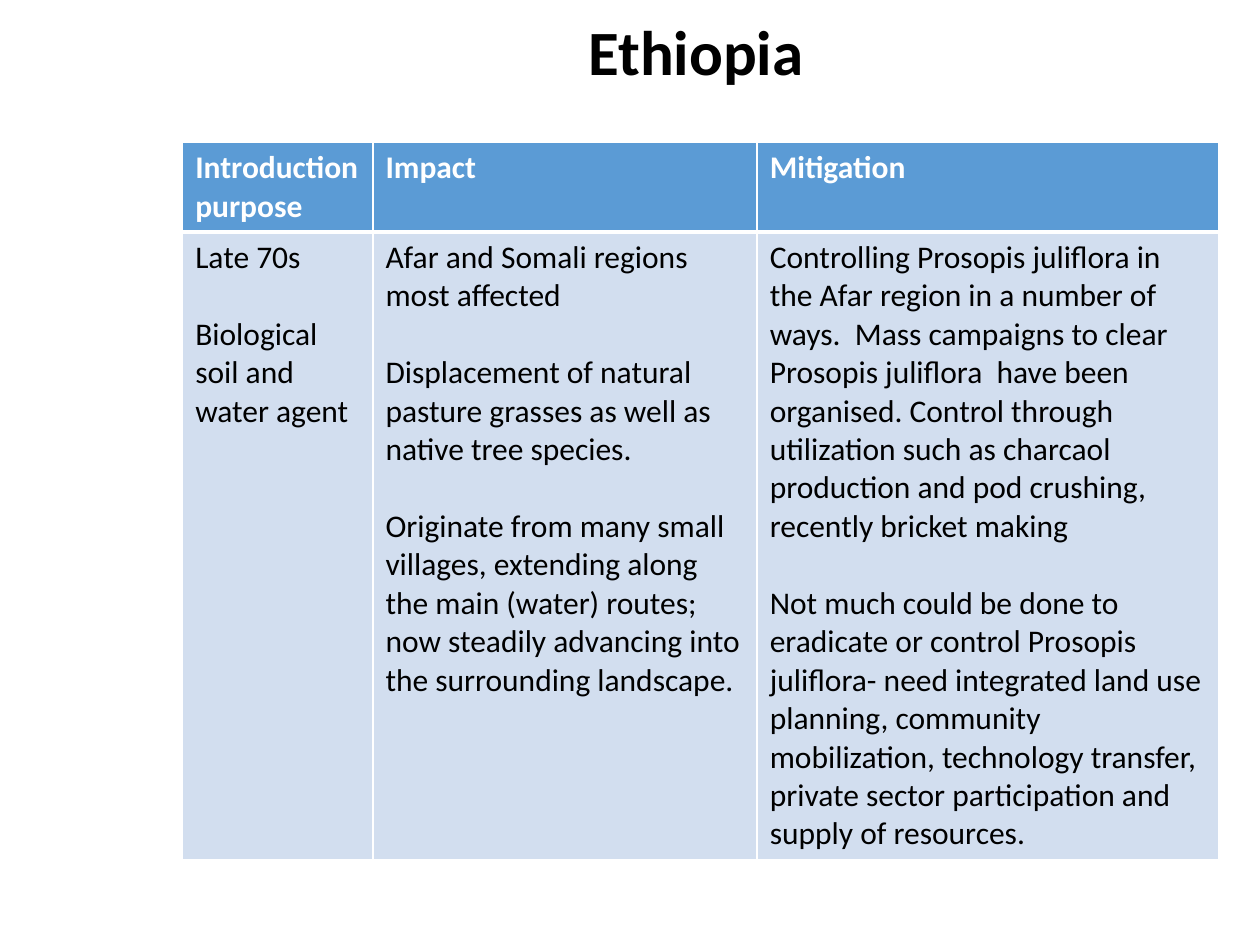
from pptx import Presentation
from pptx.dml.color import RGBColor
from pptx.enum.text import MSO_ANCHOR as Anchor, PP_ALIGN as Align
from pptx.oxml import parse_xml
from pptx.oxml.ns import nsdecls
from pptx.util import Inches, Pt

WHITE = RGBColor(0xFF, 0xFF, 0xFF)
BLACK = RGBColor(0x00, 0x00, 0x00)
HEADER_BLUE = RGBColor(0x5B, 0x9B, 0xD5)
BODY_BLUE = RGBColor(0xD2, 0xDE, 0xEF)

COLUMN_WIDTHS = [1.51, 3.05, 3.66]
ROW_HEIGHTS = [0.71, 4.98]
HEADINGS = ["Introduction purpose", "Impact", "Mitigation"]
FINDINGS = [
    ["Late 70s", "Biological soil and water agent"],
    [
        "Afar and Somali regions most affected",
        "Displacement of natural pasture grasses as well as native tree species.",
        "Originate from many small villages, extending along the main (water) routes; "
        "now steadily advancing into the surrounding landscape.",
    ],
    [
        "Controlling Prosopis juliflora in the Afar region in a number of ways.  "
        "Mass campaigns to clear Prosopis juliflora  have been organised. "
        "Control through utilization such as charcaol production and pod crushing, "
        "recently bricket making",
        "Not much could be done to eradicate or control Prosopis juliflora- need "
        "integrated land use planning, community mobilization, technology transfer, "
        "private sector participation and supply of resources.",
    ],
]


class SlideWriter:
    font_name = "Calibri"
    title_size = Pt(36)
    table_size = Pt(18)
    paragraph_gap = Pt(22)

    def __init__(self, page):
        self.page = page

    def style(self, para, size, color, bold):
        for span in para.runs:
            span.font.name = self.font_name
            span.font.size = size
            span.font.bold = bold
            span.font.color.rgb = color

    def title(self, text, left, top, width, height):
        box = self.page.shapes.add_textbox(
            Inches(left), Inches(top), Inches(width), Inches(height)
        )
        frame = box.text_frame
        frame.word_wrap = True
        frame.vertical_anchor = Anchor.MIDDLE
        frame.text = text
        para = frame.paragraphs[0]
        para.alignment = Align.CENTER
        para.line_spacing = 0.9
        self.style(para, self.title_size, BLACK, True)

    def borders(self, cell, widths):
        properties = cell._tc.get_or_add_tcPr()
        for index, (side, width) in enumerate(widths.items()):
            line = parse_xml(
                f'<a:ln{side} {nsdecls("a")} w="{Pt(width)}"><a:solidFill>'
                f'<a:srgbClr val="{WHITE}"/></a:solidFill></a:ln{side}>'
            )
            properties.insert(index, line)

    def cell(self, cell, paragraphs, fill, color, bold, widths):
        cell.fill.solid()
        cell.fill.fore_color.rgb = fill
        self.borders(cell, widths)
        cell.text_frame.text = "\n".join(paragraphs)
        for index, para in enumerate(cell.text_frame.paragraphs):
            if index:
                para.space_before = self.paragraph_gap
            self.style(para, self.table_size, color, bold)

    def table(self, left, top, column_widths, row_heights, headings, findings):
        table = self.page.shapes.add_table(
            len(row_heights), len(column_widths), Inches(left), Inches(top),
            Inches(sum(column_widths)), Inches(sum(row_heights)),
        ).table
        for column, width in zip(table.columns, column_widths):
            column.width = Inches(width)
        for row, height in zip(table.rows, row_heights):
            row.height = Inches(height)
        header_lines = {"L": 1, "R": 1, "T": 1, "B": 3}
        body_lines = {"L": 1, "R": 1, "T": 3, "B": 1}
        for index, (heading, paragraphs) in enumerate(zip(headings, findings)):
            self.cell(table.cell(0, index), [heading], HEADER_BLUE, WHITE, True, header_lines)
            self.cell(table.cell(1, index), paragraphs, BODY_BLUE, BLACK, False, body_lines)


def main():
    deck = Presentation()
    deck.slide_width = Inches(10)
    deck.slide_height = Inches(7.5)
    writer = SlideWriter(deck.slides.add_slide(deck.slide_layouts[6]))
    writer.table(1.45, 1.13, COLUMN_WIDTHS, ROW_HEIGHTS, HEADINGS, FINDINGS)
    writer.title("Ethiopia", 1.37, -0.29, 8.31, 1.45)
    deck.save("out.pptx")


if __name__ == "__main__":
    main()
